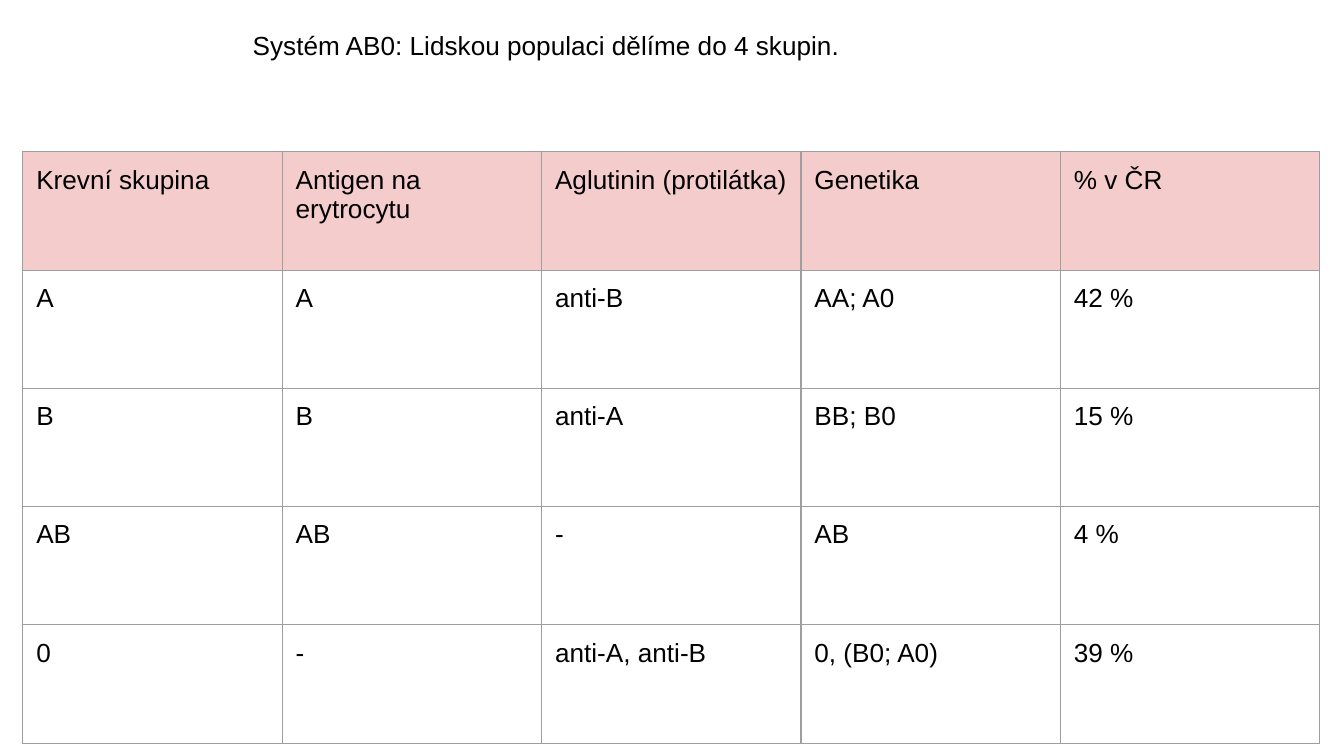
from dataclasses import dataclass

from lxml import etree
from pptx import Presentation
from pptx.dml.color import RGBColor
from pptx.enum.text import MSO_ANCHOR, MSO_AUTO_SIZE, PP_ALIGN
from pptx.oxml.ns import qn
from pptx.util import Inches, Pt

TOP = MSO_ANCHOR.TOP
LEFT = PP_ALIGN.LEFT
NO_FIT = MSO_AUTO_SIZE.NONE
TITLE_ONLY = 5


@dataclass(frozen=True)
class Theme:
    font: str = "Arial"
    size: int = 14
    ink: str = "000000"
    head: str = "F4CCCC"
    rule: str = "9E9E9E"
    rule_width: float = 0.75
    inset: float = 0.1


THEME = Theme()
WIDTH = 10
HEIGHT = WIDTH * 9 / 16
TITLE = "Systém AB0: Lidskou populaci dělíme do 4 skupin."
GROUPS = [
    ["Krevní skupina", "Antigen na erytrocytu", "Aglutinin (protilátka)", "Genetika", "% v ČR"],
    ["A", "A", "anti-B", "AA; A0", "42 %"],
    ["B", "B", "anti-A", "BB; B0", "15 %"],
    ["AB", "AB", "-", "AB", "4 %"],
    ["0", "-", "anti-A, anti-B", "0, (B0; A0)", "39 %"],
]
COL_WIDTH, ROW_HEIGHT = 1.93, 0.88


def set_text(frame, text):
    frame.text = text
    para = frame.paragraphs[0]
    para.alignment = LEFT
    para.line_spacing = 1.0
    para.space_before = Pt(0)
    font = para.runs[0].font
    font.name = THEME.font
    font.size = Pt(THEME.size)
    font.color.rgb = RGBColor.from_string(THEME.ink)


def set_inset(box):
    box.margin_left = box.margin_right = Inches(THEME.inset)
    box.margin_top = box.margin_bottom = Inches(THEME.inset)
    box.vertical_anchor = TOP


def add_title(slide):
    title = slide.shapes.title
    title.left, title.top = Inches(1.78), Inches(0.12)
    title.width, title.height = Inches(6.44), Inches(0.63)
    frame = title.text_frame
    frame.word_wrap = True
    frame.auto_size = NO_FIT
    set_inset(frame)
    set_text(frame, TITLE)


def set_border(cell):
    props = cell._tc.get_or_add_tcPr()
    # Borders must come before the fill in the cell properties
    for spot, side in enumerate(("a:lnL", "a:lnR", "a:lnT", "a:lnB")):
        line = etree.Element(qn(side), w=str(Pt(THEME.rule_width)))
        fill = etree.SubElement(line, qn("a:solidFill"))
        etree.SubElement(fill, qn("a:srgbClr"), val=THEME.rule)
        props.insert(spot, line)


def set_cell(cell, text, is_head):
    set_inset(cell)
    set_text(cell.text_frame, text)
    if is_head:
        cell.fill.solid()
        cell.fill.fore_color.rgb = RGBColor.from_string(THEME.head)
    else:
        cell.fill.background()
    set_border(cell)


def add_grid(slide, rows):
    count, width = len(rows), len(rows[0])
    table = slide.shapes.add_table(
        count, width, Inches(0.17), Inches(1.13),
        Inches(COL_WIDTH * width), Inches(ROW_HEIGHT * count),
    ).table
    table.horz_banding = False
    for col in table.columns:
        col.width = Inches(COL_WIDTH)
    for r, row in enumerate(rows):
        table.rows[r].height = Inches(ROW_HEIGHT)
        for c, text in enumerate(row):
            set_cell(table.cell(r, c), text, r == 0)


def main():
    deck = Presentation()
    deck.slide_width, deck.slide_height = Inches(WIDTH), Inches(HEIGHT)
    slide = deck.slides.add_slide(deck.slide_layouts[TITLE_ONLY])

    # Heading
    add_title(slide)

    # Blood group table
    add_grid(slide, GROUPS)

    deck.save("out.pptx")


if __name__ == "__main__":
    main()
